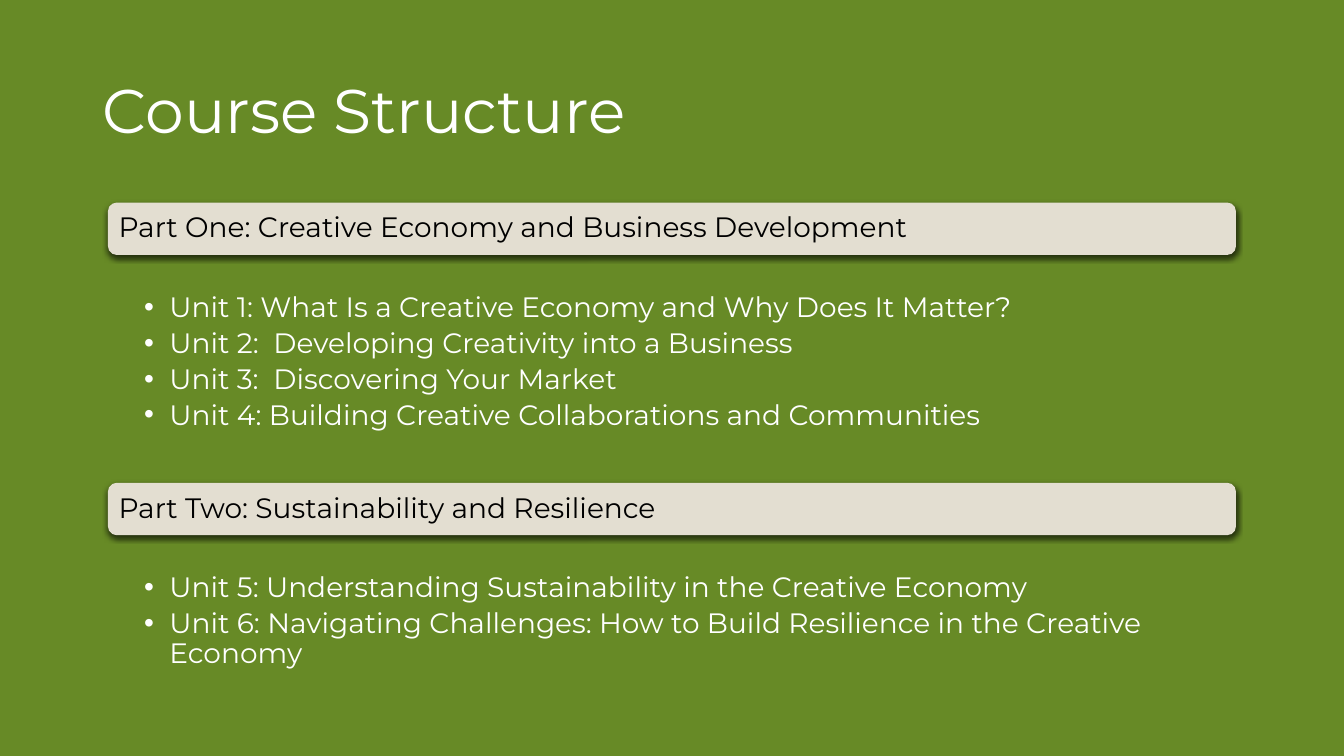
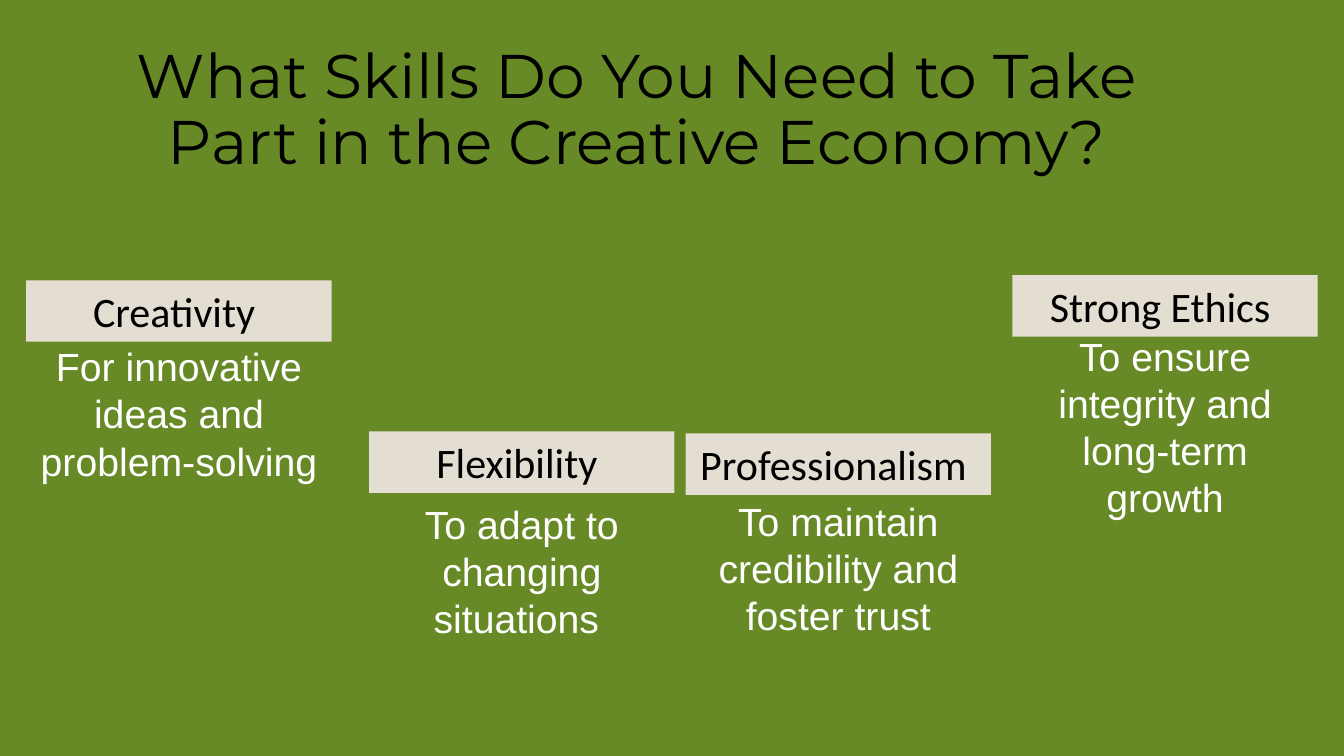
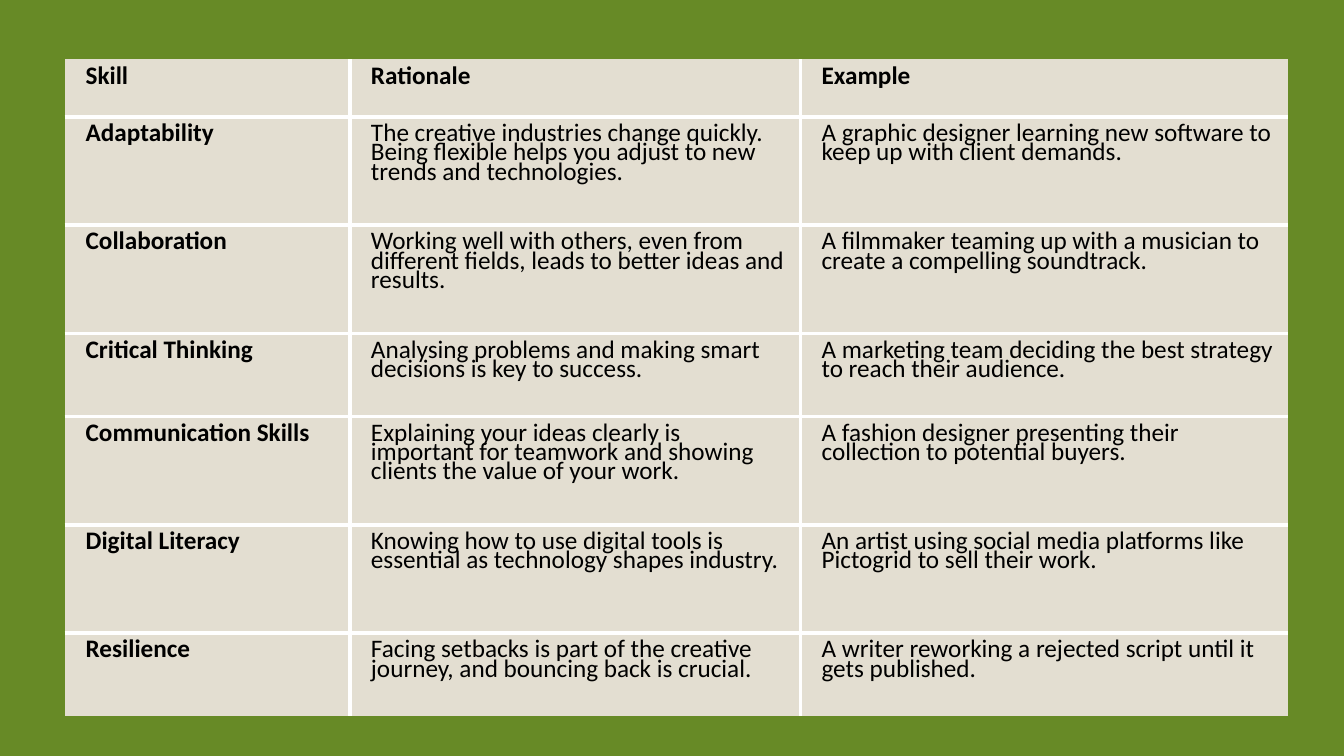
import dataclasses

import lxml.etree
import pptx
import pptx.dml.color
import pptx.enum.shapes
import pptx.enum.text
import pptx.oxml.ns
import pptx.util

Pt = pptx.util.Pt
Inches = pptx.util.Inches
qn = pptx.oxml.ns.qn
SHAPES = pptx.enum.shapes.MSO_SHAPE
ANCHOR = pptx.enum.text.MSO_ANCHOR
ALIGN = pptx.enum.text.PP_ALIGN
FIT = pptx.enum.text.MSO_AUTO_SIZE

SLIDE_WIDTH, SLIDE_HEIGHT = Inches(13.33), Inches(7.5)


@dataclasses.dataclass(frozen=True)
class TextStyle:
    font: str
    size: int
    color: str
    bold: bool = False
    spacing: object = None


@dataclasses.dataclass(frozen=True)
class Theme:
    green: str = "678A26"
    sand: str = "E3DED1"
    white: str = "FFFFFF"
    black: str = "000000"
    title: TextStyle = TextStyle("Montserrat", 44, white, spacing=0.9)
    dark_title: TextStyle = TextStyle("Montserrat", 44, black, spacing=0.9)
    section: TextStyle = TextStyle("Montserrat", 20, black, spacing=0.9)
    unit: TextStyle = TextStyle("Montserrat", 20, white, spacing=0.9)
    skill: TextStyle = TextStyle("Calibri", 30, black)
    reason: TextStyle = TextStyle("Arial", 28, white)
    cell: TextStyle = TextStyle("Calibri", 18, black, spacing=Pt(13.8))
    cell_label: TextStyle = TextStyle("Calibri", 18, black, True, Pt(13.8))
    rule_width: int = Pt(3)


THEME = Theme()

# Course sections: top of the bar (percent of the height), heading, units
SECTIONS = [
    (26.8, "Part One: Creative Economy and Business Development", [
        "Unit 1: What Is a Creative Economy and Why Does It Matter?",
        "Unit 2:  Developing Creativity into a Business",
        "Unit 3:  Discovering Your Market",
        "Unit 4: Building Creative Collaborations and Communities",
    ]),
    (63.87, "Part Two: Sustainability and Resilience", [
        "Unit 5: Understanding Sustainability in the Creative Economy",
        "Unit 6: Navigating Challenges: How to Build Resilience in the Creative Economy",
    ]),
]

# Skill cards: left, label top, reason top (percent), label, reason
CARDS = [
    (1.95, 37.07, 44.67, "Creativity ", "For innovative ideas and problem-solving"),
    (27.46, 57.07, 65.47, "Flexibility ", "To adapt to changing situations "),
    (51.01, 57.33, 65.07, "Professionalism ", "To maintain credibility and foster trust"),
    (75.32, 36.4, 43.33, "Strong Ethics ", "To ensure integrity and long-term growth"),
]

# Skills table: sizes in percent of the slide
COLUMN_WIDTHS = [21.23, 33.53, 36.31]
HEADER_ROW, TALL_ROW, SHORT_ROW = 7.6, 14.33, 10.98
SKILL_ROWS = [
    (HEADER_ROW, "Skill", "Rationale", "Example"),
    (TALL_ROW, "Adaptability",
     "The creative industries change quickly. Being flexible helps you adjust to new "
     "trends and technologies.",
     "A graphic designer learning new software to keep up with client demands."),
    (TALL_ROW, "Collaboration",
     "Working well with others, even from different fields, leads to better ideas and results.",
     "A filmmaker teaming up with a musician to create a compelling soundtrack."),
    (SHORT_ROW, "Critical Thinking",
     "Analysing problems and making smart decisions is key to success.",
     "A marketing team deciding the best strategy to reach their audience."),
    (TALL_ROW, "Communication Skills",
     "Explaining your ideas clearly is important for teamwork and showing clients "
     "the value of your work.",
     "A fashion designer presenting their collection to potential buyers."),
    (TALL_ROW, "Digital Literacy",
     "Knowing how to use digital tools is essential as technology shapes industry.",
     "An artist using social media platforms like Pictogrid to sell their work."),
    (SHORT_ROW, "Resilience",
     "Facing setbacks is part of the creative journey, and bouncing back is crucial.",
     "A writer reworking a rejected script until it gets published."),
]


# Grid and text helpers
def across(percent):
    return int(SLIDE_WIDTH * percent / 100)


def down(percent):
    return int(SLIDE_HEIGHT * percent / 100)


def place(left, top, width, height):
    return across(left), down(top), across(width), down(height)


def rgb(color):
    return pptx.dml.color.RGBColor.from_string(color)


def set_margins(target, left, top, right, bottom):
    target.margin_left, target.margin_top = Inches(left), Inches(top)
    target.margin_right, target.margin_bottom = Inches(right), Inches(bottom)


def write(paragraph, text, style, align=ALIGN.LEFT):
    paragraph.alignment = align
    if style.spacing is not None:
        paragraph.line_spacing = style.spacing
    run = paragraph.add_run()
    run.text = text
    run.font.name, run.font.size = style.font, Pt(style.size)
    run.font.bold = style.bold
    run.font.color.rgb = rgb(style.color)


def add_bullet(paragraph):
    properties = paragraph._p.get_or_add_pPr()
    properties.set("marL", str(Inches(0.25)))
    properties.set("indent", str(-Inches(0.25)))
    lxml.etree.SubElement(properties, qn("a:buFont"), typeface="Arial")
    lxml.etree.SubElement(properties, qn("a:buChar"), char="•")


# Slide elements
def add_text_box(slide, box):
    frame = slide.shapes.add_textbox(*box).text_frame
    frame.word_wrap = True
    return frame


def add_title(slide, box, text, style, align=ALIGN.LEFT):
    frame = add_text_box(slide, box)
    frame.vertical_anchor = ANCHOR.MIDDLE
    write(frame.paragraphs[0], text, style, align)


def add_panel(slide, kind, box):
    shape = slide.shapes.add_shape(kind, *box)
    shape.shadow.inherit = False
    shape.fill.solid()
    shape.fill.fore_color.rgb = rgb(THEME.sand)
    shape.line.fill.background()
    shape.text_frame.word_wrap = True
    return shape


def add_drop_shadow(shape):
    effects = shape._element.spPr.find(qn("a:effectLst"))
    shadow = lxml.etree.SubElement(
        effects, qn("a:outerShdw"), blurRad=str(Pt(4.5)), dist=str(Pt(1.5)),
        dir="5400000", algn="ctr", rotWithShape="0")
    color = lxml.etree.SubElement(shadow, qn("a:srgbClr"), val=THEME.black)
    lxml.etree.SubElement(color, qn("a:alpha"), val="63000")


def add_section(slide, top, heading, units):
    left, width, bar_height, units_offset, unit_row = 8.03, 83.93, 6.93, 11.6, 4.7
    bar = add_panel(slide, SHAPES.ROUNDED_RECTANGLE, place(left, top, width, bar_height))
    add_drop_shadow(bar)
    set_margins(bar.text_frame, 0.08, 0.08, 0.08, 0.08)
    bar.text_frame.vertical_anchor = ANCHOR.MIDDLE
    write(bar.text_frame.paragraphs[0], heading, THEME.section)

    box = place(left, top + units_offset, width, unit_row * (len(units) + 1))
    frame = add_text_box(slide, box)
    set_margins(frame, 0.36, 0.03, 0.16, 0.03)
    for index, unit in enumerate(units):
        paragraph = frame.add_paragraph() if index else frame.paragraphs[0]
        add_bullet(paragraph)
        paragraph.space_after = Pt(4)
        write(paragraph, unit, THEME.unit)


def add_card(slide, left, label_top, reason_top, label, reason):
    width, label_height, reason_height = 22.73, 8.13, 20.13
    panel = add_panel(slide, SHAPES.RECTANGLE, place(left, label_top, width, label_height))
    reason_frame = add_text_box(slide, place(left, reason_top, width, reason_height))
    for frame, text, style in ((panel.text_frame, label, THEME.skill),
                               (reason_frame, reason, THEME.reason)):
        frame.auto_size = FIT.SHAPE_TO_FIT_TEXT
        frame.vertical_anchor = ANCHOR.TOP
        write(frame.paragraphs[0], text, style, ALIGN.CENTER)


def set_borders(cell, ruled_sides):
    properties = cell._tc.get_or_add_tcPr()
    for index, side in enumerate("LRTB"):
        border = lxml.etree.Element(qn(f"a:ln{side}"), w=str(THEME.rule_width))
        if side in ruled_sides:
            fill = lxml.etree.SubElement(border, qn("a:solidFill"))
            lxml.etree.SubElement(fill, qn("a:srgbClr"), val=THEME.white)
        else:
            lxml.etree.SubElement(border, qn("a:noFill"))
        properties.insert(index, border)


def add_skill_table(slide, left, top, widths, rows):
    heights = [row[0] for row in rows]
    box = place(left, top, sum(widths), sum(heights))
    table = slide.shapes.add_table(len(rows), len(widths), *box).table
    table.horz_banding = False
    for column, width in zip(table.columns, widths):
        column.width = across(width)
    last_row, last_column = len(rows) - 1, len(widths) - 1
    for row_index, (height, *texts) in enumerate(rows):
        table.rows[row_index].height = down(height)
        for column_index, text in enumerate(texts):
            cell = table.cell(row_index, column_index)
            set_margins(cell, 0.21, 0.12, 0.12, 0.12)
            cell.fill.solid()
            cell.fill.fore_color.rgb = rgb(THEME.sand)
            inner = {"L": column_index > 0, "R": column_index < last_column,
                     "T": row_index > 0, "B": row_index < last_row}
            set_borders(cell, [side for side, ruled in inner.items() if ruled])
            is_label = row_index == 0 or column_index == 0
            style = THEME.cell_label if is_label else THEME.cell
            write(cell.text_frame.paragraphs[0], text, style)


def main():
    presentation = pptx.Presentation()
    presentation.slide_width, presentation.slide_height = SLIDE_WIDTH, SLIDE_HEIGHT
    background = presentation.slide_master.background.fill
    background.solid()
    background.fore_color.rgb = rgb(THEME.green)
    blank = presentation.slide_layouts[6]
    structure, skills, details = (presentation.slides.add_slide(blank) for _ in range(3))

    # Course structure
    add_title(structure, place(6.9, 5.33, 86.27, 19.33), "Course Structure", THEME.title)
    for section in SECTIONS:
        add_section(structure, *section)

    # Skills overview
    add_title(skills, place(4.28, 5.07, 86.27, 19.33),
              "What Skills Do You Need to Take Part in the Creative Economy?",
              THEME.dark_title, ALIGN.CENTER)
    for card in CARDS:
        add_card(skills, *card)

    # Skills in detail
    add_skill_table(details, 4.8, 7.87, COLUMN_WIDTHS, SKILL_ROWS)

    presentation.save("out.pptx")


if __name__ == "__main__":
    main()
